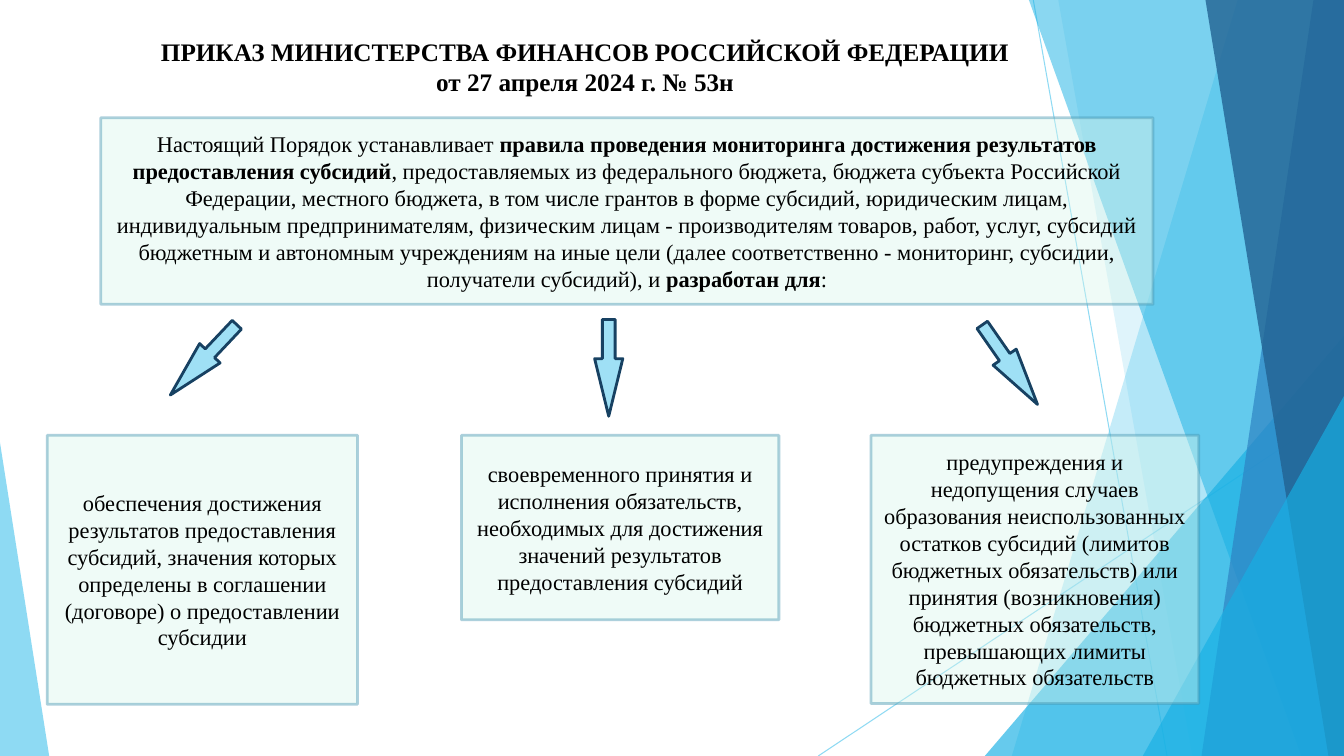
from lxml.etree import SubElement
from pptx import Presentation
from pptx.dml.color import RGBColor
from pptx.enum.shapes import MSO_CONNECTOR, MSO_SHAPE
from pptx.enum.text import MSO_ANCHOR, PP_ALIGN
from pptx.oxml.ns import qn
from pptx.util import Cm, Pt

WIDTH, HEIGHT = 33.87, 19.05
FONT = "Times New Roman"
COLOURS = {
    "sky": "5FCBEF", "azure": "17B0E4", "blue": "2E83C3", "navy": "226292",
    "mint": "D9F6EC", "teal": "4696B1", "arrow": "9FE0F5", "edge": "174162",
    "text": "000000",
}

TITLE = ["ПРИКАЗ МИНИСТЕРСТВА ФИНАНСОВ РОССИЙСКОЙ ФЕДЕРАЦИИ",
         "от 27 апреля 2024 г. № 53н"]
PURPOSE = [
    ("Настоящий Порядок устанавливает ", False),
    ("правила проведения мониторинга достижения результатов предоставления субсидий", True),
    (", предоставляемых из федерального бюджета, бюджета субъекта Российской Федерации, "
     "местного бюджета, в том числе грантов в форме субсидий, юридическим лицам, "
     "индивидуальным предпринимателям, физическим лицам - производителям товаров, работ, "
     "услуг, субсидий бюджетным и автономным учреждениям на иные цели (далее "
     "соответственно - мониторинг, субсидии, получатели субсидий), и ", False),
    ("разработан для", True),
    (":", False),
]
GOALS = [
    "обеспечения достижения результатов предоставления субсидий, значения которых "
    "определены в соглашении (договоре) о предоставлении субсидии",
    "своевременного принятия и исполнения обязательств, необходимых для достижения "
    "значений результатов предоставления субсидий",
    "предупреждения и недопущения случаев образования неиспользованных остатков субсидий "
    "(лимитов бюджетных обязательств) или принятия (возникновения) бюджетных "
    "обязательств, превышающих лимиты бюджетных обязательств",
]
PURPOSE_PLACE = (2.54, 2.97, 26.52, 4.7)
GOAL_TOP = 10.97
GOAL_PLACES = [(1.19, 7.82, 6.78), (11.63, 8, 4.65), (21.95, 8.26, 6.76)]
ARROW_LENGTH, ARROW_BREADTH = 2.44, 0.71
ARROWS = [(5.13, 9.07, 133.4), (15.34, 9.27, 90), (25.45, 9.19, 55.2)]

RAYS = [(26.04, 0, 29.41, HEIGHT), (WIDTH, 10.24, 20.62, HEIGHT)]
BACKDROP = [
    ("band", 31.19, 25.5, "sky", 36),
    ("band", 26.67, 30.05, "sky", 20),
    ("corner", 24.82, 8.46, "azure", 66),
    ("band", 25.93, 32.79, "azure", 50),
    ("band", 33.1, 30.28, "blue", 70),
    ("band", 30.38, 33.48, "navy", 80),
    ("corner", 28.8, 9.98, "azure", 66),
]


def paint(target, colour, opacity=100):
    target.solid()
    target.fore_color.rgb = RGBColor.from_string(COLOURS[colour])
    if opacity < 100:
        for tint in target._xPr.iter(qn("a:srgbClr")):
            SubElement(tint, qn("a:alpha"), val=str(opacity * 1000))


def draw_shape(kind, left, top, width, height):
    shape = page.shapes.add_shape(kind, Cm(left), Cm(top), Cm(width), Cm(height))
    shape.shadow.inherit = False
    return shape


def draw_band(top_x, bottom_x):
    builder = page.shapes.build_freeform(Cm(top_x), 0)
    corners = [(WIDTH, 0), (WIDTH, HEIGHT), (bottom_x, HEIGHT)]
    builder.add_line_segments([(Cm(x), Cm(y)) for x, y in corners], close=True)
    band = builder.convert_to_shape()
    band.shadow.inherit = False
    return band


def draw_triangle(left, top, width, apex):
    triangle = draw_shape(MSO_SHAPE.ISOSCELES_TRIANGLE, left, top, width, HEIGHT - top)
    triangle.adjustments[0] = apex
    return triangle


def draw_backdrop():
    for start_x, start_y, end_x, end_y in RAYS:
        ray = page.shapes.add_connector(
            MSO_CONNECTOR.STRAIGHT, Cm(start_x), Cm(start_y), Cm(end_x), Cm(end_y))
        ray.line.width = Pt(0.75)
        paint(ray.line.fill, "sky", 70)
        SubElement(ray._element.spPr, qn("a:effectLst"))
    for kind, first, second, colour, opacity in BACKDROP:
        if kind == "band":
            piece = draw_band(first, second)
        else:
            piece = draw_triangle(first, second, WIDTH - first, 1)
        paint(piece.fill, colour, opacity)
        piece.line.fill.background()
    left_corner = draw_triangle(0, 11.15, 1.24, 0)
    paint(left_corner.fill, "sky", 70)
    left_corner.line.fill.background()


def style_paragraph(para, size):
    para.alignment = PP_ALIGN.CENTER
    para.font.name = FONT
    para.font.size = Pt(size)
    para.font.color.rgb = RGBColor.from_string(COLOURS["text"])


def draw_box(place, spans):
    box = draw_shape(MSO_SHAPE.RECTANGLE, *place)
    paint(box.fill, "mint", 41)
    box.line.width = Pt(2)
    paint(box.line.fill, "teal", 43)
    box.text_frame.word_wrap = True
    box.text_frame.vertical_anchor = MSO_ANCHOR.MIDDLE
    para = box.text_frame.paragraphs[0]
    style_paragraph(para, 16)
    for text, bold in spans:
        span = para.add_run()
        span.text = text
        span.font.bold = bold


def draw_arrow(center_x, center_y, angle):
    arrow = draw_shape(MSO_SHAPE.RIGHT_ARROW, center_x - ARROW_LENGTH / 2,
                       center_y - ARROW_BREADTH / 2, ARROW_LENGTH, ARROW_BREADTH)
    arrow.rotation = angle
    arrow.adjustments[0] = 0.453
    arrow.adjustments[1] = 2.043
    paint(arrow.fill, "arrow")
    arrow.line.width = Pt(2)
    paint(arrow.line.fill, "edge")


def fill_title():
    title = page.shapes.title
    title.left, title.top, title.width, title.height = Cm(2.54), Cm(0.7), Cm(24.41), Cm(1.95)
    frame = title.text_frame
    frame.word_wrap = True
    frame.vertical_anchor = MSO_ANCHOR.MIDDLE
    frame.text = "\n".join(TITLE)
    for para in frame.paragraphs:
        style_paragraph(para, 18)
        para.font.bold = True


deck = Presentation()
deck.slide_width, deck.slide_height = Cm(WIDTH), Cm(HEIGHT)
page = deck.slides.add_slide(deck.slide_layouts[5])
draw_backdrop()
fill_title()
draw_box(PURPOSE_PLACE, PURPOSE)
for (left, width, height), goal in zip(GOAL_PLACES, GOALS):
    draw_box((left, GOAL_TOP, width, height), [(goal, False)])
for arrow_place in ARROWS:
    draw_arrow(*arrow_place)
deck.save("out.pptx")
